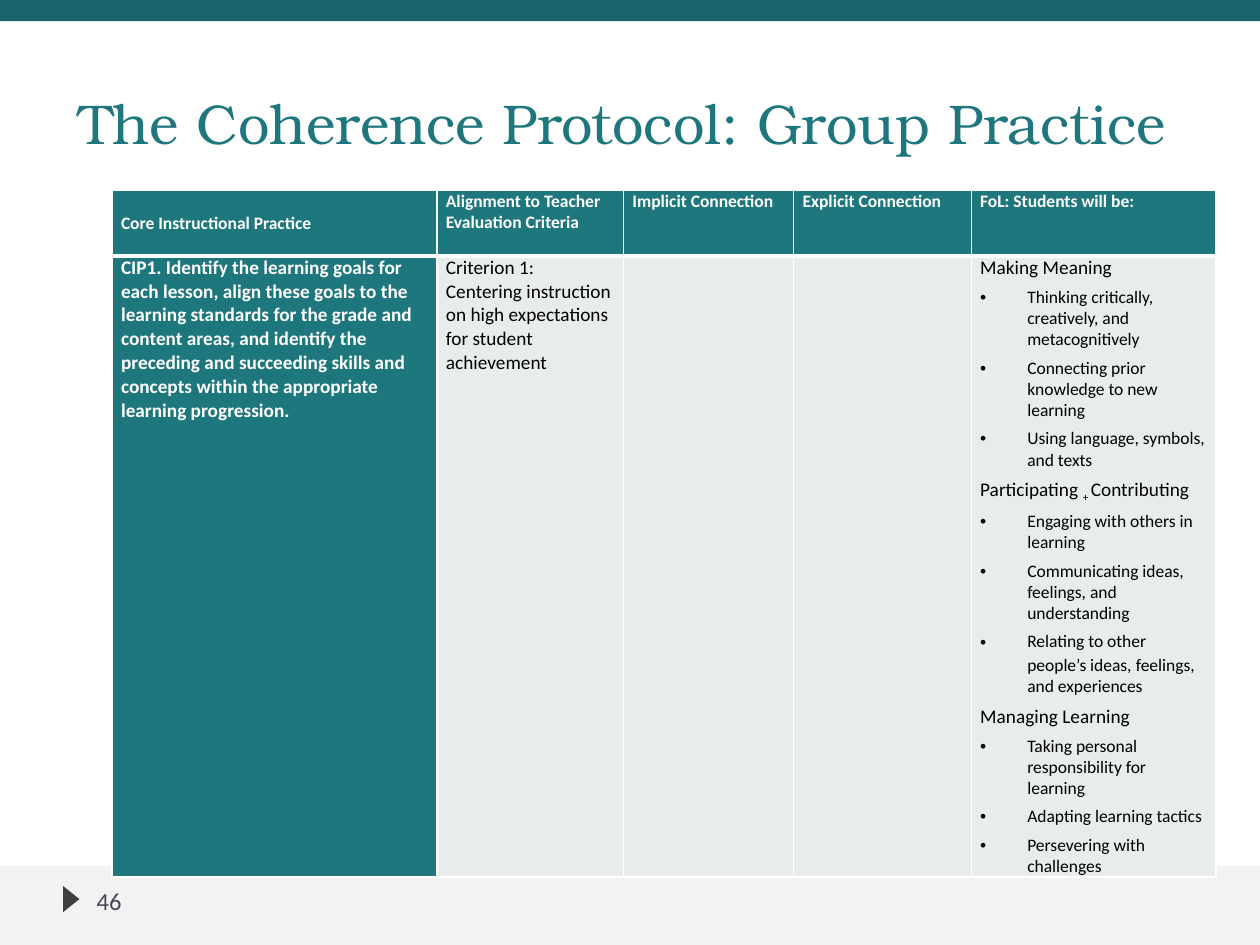
from dataclasses import dataclass

from lxml import etree
from pptx import Presentation, util as u
from pptx.dml.color import RGBColor
from pptx.enum import shapes, text
from pptx.oxml import ns

COLOURS = {
    "teal": "1F777E",
    "dark teal": "19646B",
    "pale": "E8ECEC",
    "footer": "F2F2F2",
    "arrow": "3F3F3F",
    "number": "464653",
    "white": "FFFFFF",
    "black": "000000",
}
BODY_FONT = "Calibri"
COLUMN_WIDTHS = (6.55, 3.76, 3.43, 3.58, 4.93)
ROW_HEIGHTS = (1.32, 12.37)
BULLET_INDENT = u.Cm(0.95)


@dataclass
class Box:
    left: float
    top: float
    width: float
    height: float

    def lengths(self) -> list:
        return [u.Cm(value) for value in (self.left, self.top, self.width, self.height)]


@dataclass
class Decoration:
    kind: shapes.MSO_SHAPE
    box: Box
    colour: str
    rotation: int = 0


@dataclass
class Run:
    words: str
    size: float
    baseline: int = 0


@dataclass
class Line:
    runs: list
    bullet: bool = False


@dataclass
class CellContent:
    lines: list
    fill: str = "pale"
    colour: str = "black"
    bold: bool = False
    anchor: text.MSO_ANCHOR = text.MSO_ANCHOR.TOP


DECORATIONS = (
    Decoration(shapes.MSO_SHAPE.RECTANGLE, Box(0, 17.45, 25.4, 1.6), "footer"),
    Decoration(shapes.MSO_SHAPE.RECTANGLE, Box(0, 0, 25.4, 0.43), "dark teal"),
    Decoration(shapes.MSO_SHAPE.ISOSCELES_TRIANGLE, Box(1.17, 17.96, 0.53, 0.33), "arrow", 90),
)


def plain(words: str, size: float = 11) -> Line:
    return Line([Run(words, size)])


def bullets(*items: str) -> list:
    return [Line([Run(item, 10)], True) for item in items]


HEADERS = (
    "Core Instructional Practice",
    "Alignment to Teacher Evaluation Criteria",
    "Implicit Connection",
    "Explicit Connection",
    "FoL: Students will be:",
)
PRACTICE = (
    "CIP1. Identify the learning goals for each lesson, align these goals to the learning "
    "standards for the grade and content areas, and identify the preceding and succeeding "
    "skills and concepts within the appropriate learning progression."
)
CRITERION = "Criterion 1: Centering instruction on high expectations for student achievement"
STUDENT_ACTIONS = [
    plain("Making Meaning"),
    *bullets(
        "Thinking critically, creatively, and metacognitively",
        "Connecting prior knowledge to new learning",
        "Using language, symbols, and texts",
    ),
    Line([Run("Participating ", 11), Run("+ ", 11, -25000), Run("Contributing", 11)]),
    *bullets(
        "Engaging with others in learning",
        "Communicating ideas, feelings, and understanding",
    ),
    Line([Run("Relating to other people’s ideas,", 10), Run(" ", 11),
          Run("feelings, and experiences", 10)], True),
    plain("Managing Learning"),
    *bullets(
        "Taking personal responsibility for learning",
        "Adapting learning tactics",
        "Persevering with challenges",
    ),
]
HEADER_ROW = [CellContent([plain(header, 10)], "teal", "white", True) for header in HEADERS]
HEADER_ROW[0].anchor = text.MSO_ANCHOR.MIDDLE
PRACTICE_ROW = [
    CellContent([plain(PRACTICE)], "teal", "white", True),
    CellContent([plain(CRITERION)]),
    CellContent([]),
    CellContent([]),
    CellContent(STUDENT_ACTIONS),
]


def colour_of(name: str) -> RGBColor:
    return RGBColor.from_string(COLOURS[name])


def apply(target, formats: dict) -> None:
    for name, value in formats.items():
        setattr(target, name, value)


def format_font(font, name: str, size: float, colour: str, bold: bool = False) -> None:
    apply(font, {"name": name, "size": u.Pt(size), "bold": bold})
    font.color.rgb = colour_of(colour)


def draw_decoration(slide, decoration: Decoration) -> None:
    shape = slide.shapes.add_shape(decoration.kind, *decoration.box.lengths())
    shape.shadow.inherit = False
    shape.rotation = decoration.rotation
    shape.fill.solid()
    shape.fill.fore_color.rgb = colour_of(decoration.colour)
    shape.line.fill.background()


def draw_text(shape, words: str, font: str, size: float, colour: str, anchor) -> None:
    frame = shape.text_frame
    frame.text = words
    apply(frame, {"word_wrap": True, "auto_size": text.MSO_AUTO_SIZE.NONE,
                  "vertical_anchor": anchor})
    paragraph = frame.paragraphs[0]
    paragraph.alignment = text.PP_ALIGN.LEFT
    format_font(paragraph.runs[0].font, font, size, colour)


def add_bullet(paragraph) -> None:
    properties = paragraph._p.get_or_add_pPr()
    apply_indent = {"marL": BULLET_INDENT, "indent": -BULLET_INDENT}
    for name, value in apply_indent.items():
        properties.set(name, str(int(value)))
    etree.SubElement(properties, ns.qn("a:buFont"), typeface="Arial")
    etree.SubElement(properties, ns.qn("a:buChar"), char="•")


def draw_borders(cell, bottom: float) -> None:
    properties = cell._tc.get_or_add_tcPr()
    widths = {"a:lnL": 1, "a:lnR": 1, "a:lnT": 1, "a:lnB": bottom}
    for position, (tag, width) in enumerate(widths.items()):
        border = etree.Element(ns.qn(tag), w=str(int(u.Pt(width))))
        fill = etree.SubElement(border, ns.qn("a:solidFill"))
        etree.SubElement(fill, ns.qn("a:srgbClr"), val=COLOURS["white"])
        properties.insert(position, border)


def draw_cell(cell, content: CellContent, bottom: float) -> None:
    apply(cell, {"margin_left": u.Cm(0.18), "margin_right": u.Cm(0.18), "margin_top": 0,
                 "margin_bottom": 0, "vertical_anchor": content.anchor})
    cell.fill.solid()
    cell.fill.fore_color.rgb = colour_of(content.fill)
    draw_borders(cell, bottom)
    frame = cell.text_frame
    for index, line in enumerate(content.lines):
        paragraph = frame.add_paragraph() if index else frame.paragraphs[0]
        apply(paragraph, {"space_before": u.Pt(2 if index else 0), "space_after": u.Pt(2)})
        if line.bullet:
            add_bullet(paragraph)
        for part in line.runs:
            run = paragraph.add_run()
            run.text = part.words
            format_font(run.font, BODY_FONT, part.size, content.colour, content.bold)
            if part.baseline:
                run.font._element.set("baseline", str(part.baseline))


def draw_table(slide) -> None:
    box = Box(2.26, 3.84, sum(COLUMN_WIDTHS), sum(ROW_HEIGHTS))
    table = slide.shapes.add_table(len(ROW_HEIGHTS), len(COLUMN_WIDTHS), *box.lengths()).table
    table.horz_banding = False
    for column, width in zip(table.columns, COLUMN_WIDTHS):
        column.width = u.Cm(width)
    for row, height, contents, bottom in zip(table.rows, ROW_HEIGHTS,
                                             (HEADER_ROW, PRACTICE_ROW), (3, 1)):
        row.height = u.Cm(height)
        for cell, content in zip(row.cells, contents):
            draw_cell(cell, content, bottom)


def main() -> None:
    presentation = Presentation()
    apply(presentation, {"slide_width": u.Cm(25.4), "slide_height": u.Cm(19.05)})
    slide = presentation.slides.add_slide(presentation.slide_layouts[5])
    for decoration in DECORATIONS:
        draw_decoration(slide, decoration)
    draw_table(slide)
    number = slide.shapes.add_textbox(*Box(1.7, 17.65, 5.51, 1.02).lengths())
    draw_text(number, "46", BODY_FONT, 14, "number", text.MSO_ANCHOR.MIDDLE)
    title = slide.shapes.title
    apply(title, dict(zip(("left", "top", "width", "height"),
                          Box(1.32, 0.43, 22.91, 2.84).lengths())))
    draw_text(title, "The Coherence Protocol: Group Practice", "TeX Gyre Bonum", 32, "teal",
              text.MSO_ANCHOR.BOTTOM)
    presentation.save("out.pptx")


if __name__ == "__main__":
    main()
